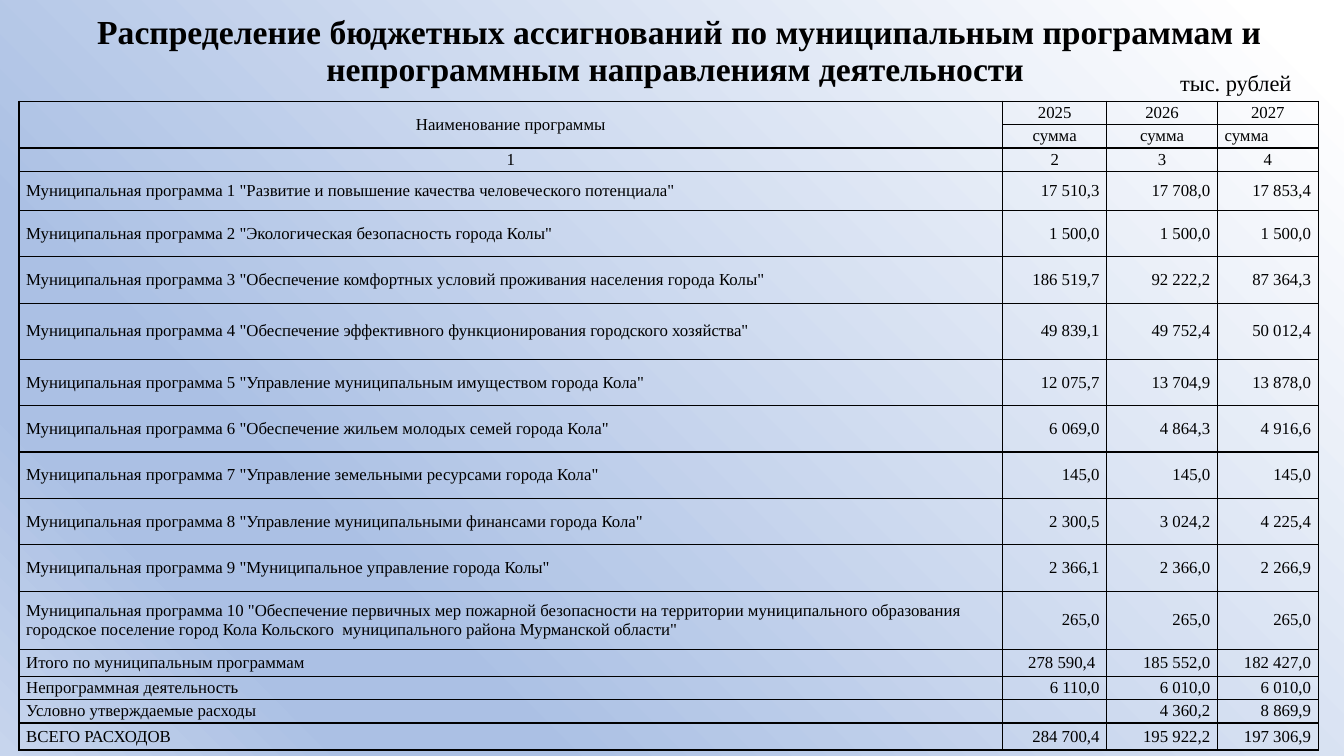
from dataclasses import dataclass
from lxml import etree
from pptx import Presentation, util as u
from pptx.dml.color import RGBColor
from pptx.enum import text
from pptx.oxml import parse_xml
from pptx.oxml.ns import qn

# Content
TITLE = ("Распределение бюджетных ассигнований по муниципальным программам и "
         "непрограммным направлениям деятельности ")
UNITS = "тыс. рублей"
HEADER = [
    ("Наименование программы", "2025", "2026", "2027"),
    ("", "сумма", "сумма", "сумма"),
    ("1", "2", "3", "4"),
]
PROGRAMS = [
    ('Муниципальная программа 1 "Развитие и повышение качества человеческого потенциала"',
     "17 510,3", "17 708,0", "17 853,4"),
    ('Муниципальная программа 2 "Экологическая безопасность города Колы"',
     "1 500,0", "1 500,0", "1 500,0"),
    ('Муниципальная программа 3 "Обеспечение комфортных условий проживания населения города Колы"',
     "186 519,7", "92 222,2", "87 364,3"),
    ('Муниципальная программа 4 "Обеспечение эффективного функционирования городского хозяйства"',
     "49 839,1", "49 752,4", "50 012,4"),
    ('Муниципальная программа 5 "Управление муниципальным имуществом города Кола"',
     "12 075,7", "13 704,9", "13 878,0"),
    ('Муниципальная программа 6 "Обеспечение жильем молодых семей города Кола"',
     "6 069,0", "4 864,3", "4 916,6"),
    ('Муниципальная программа 7 "Управление земельными ресурсами города Кола"',
     "145,0", "145,0", "145,0"),
    ('Муниципальная программа 8 "Управление муниципальными финансами города Кола"',
     "2 300,5", "3 024,2", "4 225,4"),
    ('Муниципальная программа 9 "Муниципальное управление города Колы"',
     "2 366,1", "2 366,0", "2 266,9"),
    ('Муниципальная программа 10 "Обеспечение первичных мер пожарной безопасности на территории '
     'муниципального образования городское поселение город Кола Кольского  муниципального района '
     'Мурманской области"', "265,0", "265,0", "265,0"),
]
TOTALS = [
    ("Итого по муниципальным программам", "278 590,4 ", "185 552,0", "182 427,0"),
    ("Непрограммная деятельность", "6 110,0", "6 010,0", "6 010,0"),
    ("Условно утверждаемые расходы", "", "4 360,2", "8 869,9"),
    ("ВСЕГО РАСХОДОВ", "284 700,4", "195 922,2", "197 306,9"),
]
ROWS = HEADER + PROGRAMS + TOTALS

# Sizes in centimetres
COL_WIDTHS = [24.79, 2.62, 2.79, 2.54]
LOW, MID = 0.59, 1.17
ROW_HEIGHTS = ([LOW] * 3 + [0.98, MID, MID, 1.41] + [MID] * 5
               + [1.46, 0.68, LOW, LOW, 0.68])


@dataclass
class Theme:
    font: str = "Times New Roman"
    ink: str = "000000"
    title: int = 24
    units: int = 16
    cell: int = 12
    border: float = 1
    stops: tuple = ((4, "FFFFFF"), (74, "ABC0E4"), (83, "ABC0E4"), (100, "C7D5ED"))
    angle: int = 135


T = Theme()
A = "http://schemas.openxmlformats.org/drawingml/2006/main"
P = "http://schemas.openxmlformats.org/presentationml/2006/main"
ALIGN = text.PP_ALIGN


def add_run(p, words, size, bold=False):
    r = p.add_run()
    r.text = words
    r.font.name, r.font.size, r.font.bold = T.font, u.Pt(size), bold
    r.font.color.rgb = RGBColor.from_string(T.ink)


def set_background(s):
    stops = "".join(f'<a:gs pos="{pos * 1000}"><a:srgbClr val="{color}"/></a:gs>'
                    for pos, color in T.stops)
    bg = parse_xml(
        f'<p:bg xmlns:p="{P}" xmlns:a="{A}"><p:bgPr><a:gradFill rotWithShape="1">'
        f'<a:gsLst>{stops}</a:gsLst><a:lin ang="{T.angle * 60000}" scaled="0"/>'
        '</a:gradFill><a:effectLst/></p:bgPr></p:bg>')
    s.element.cSld.insert(0, bg)


def set_borders(cell):
    tcPr = cell._tc.get_or_add_tcPr()
    for side in "LRTB":
        tcPr.append(parse_xml(
            f'<a:ln{side} xmlns:a="{A}" w="{int(u.Pt(T.border))}"><a:solidFill>'
            f'<a:srgbClr val="{T.ink}"/></a:solidFill></a:ln{side}>'))


def cell_align(row, col):
    if row < len(HEADER):
        last_sum = row == 1 and col == len(COL_WIDTHS) - 1
        return ALIGN.LEFT if last_sum else ALIGN.CENTER
    return ALIGN.RIGHT if col else ALIGN.LEFT


def fill_cell(cell, words, align):
    cell.margin_left = cell.margin_right = u.Cm(0.18)
    cell.margin_top = cell.margin_bottom = 0
    cell.vertical_anchor = text.MSO_ANCHOR.MIDDLE
    set_borders(cell)
    cell.fill.background()
    p = cell.text_frame.paragraphs[0]
    p.alignment = align
    if words:
        add_run(p, words, T.cell)
    else:
        etree.SubElement(p._p, qn("a:endParaRPr"), sz=str(T.cell * 100))


def main():
    prs = Presentation()
    prs.slide_width, prs.slide_height = u.Cm(33.87), u.Cm(19.05)
    s = prs.slides.add_slide(prs.slide_layouts[5])
    set_background(s)

    # Title
    sp = s.shapes.title
    sp.left, sp.top, sp.width, sp.height = u.Cm(1.02), u.Cm(0.53), u.Cm(32.2), u.Cm(1.57)
    tf = sp.text_frame
    tf.auto_size = text.MSO_AUTO_SIZE.NONE
    tf.vertical_anchor = text.MSO_ANCHOR.MIDDLE
    p = tf.paragraphs[0]
    p.alignment, p.line_spacing = ALIGN.CENTER, 0.9
    add_run(p, TITLE, T.title, bold=True)

    # Units
    sp = s.shapes.add_textbox(u.Cm(29.49), u.Cm(1.63), u.Cm(3.35), u.Cm(0.94))
    tf = sp.text_frame
    tf.word_wrap = False
    tf.auto_size = text.MSO_AUTO_SIZE.SHAPE_TO_FIT_TEXT
    add_run(tf.paragraphs[0], UNITS, T.units)

    # Budget table
    table = s.shapes.add_table(
        len(ROWS), len(COL_WIDTHS), u.Cm(0.48), u.Cm(2.55),
        u.Cm(sum(COL_WIDTHS)), u.Cm(sum(ROW_HEIGHTS))).table
    table.first_row = table.horz_banding = False
    for column, width in zip(table.columns, COL_WIDTHS):
        column.width = u.Cm(width)
    for i, (height, values) in enumerate(zip(ROW_HEIGHTS, ROWS)):
        table.rows[i].height = u.Cm(height)
        for j, words in enumerate(values):
            fill_cell(table.cell(i, j), words, cell_align(i, j))
    table.cell(0, 0).merge(table.cell(1, 0))

    prs.save("out.pptx")


if __name__ == "__main__":
    main()
